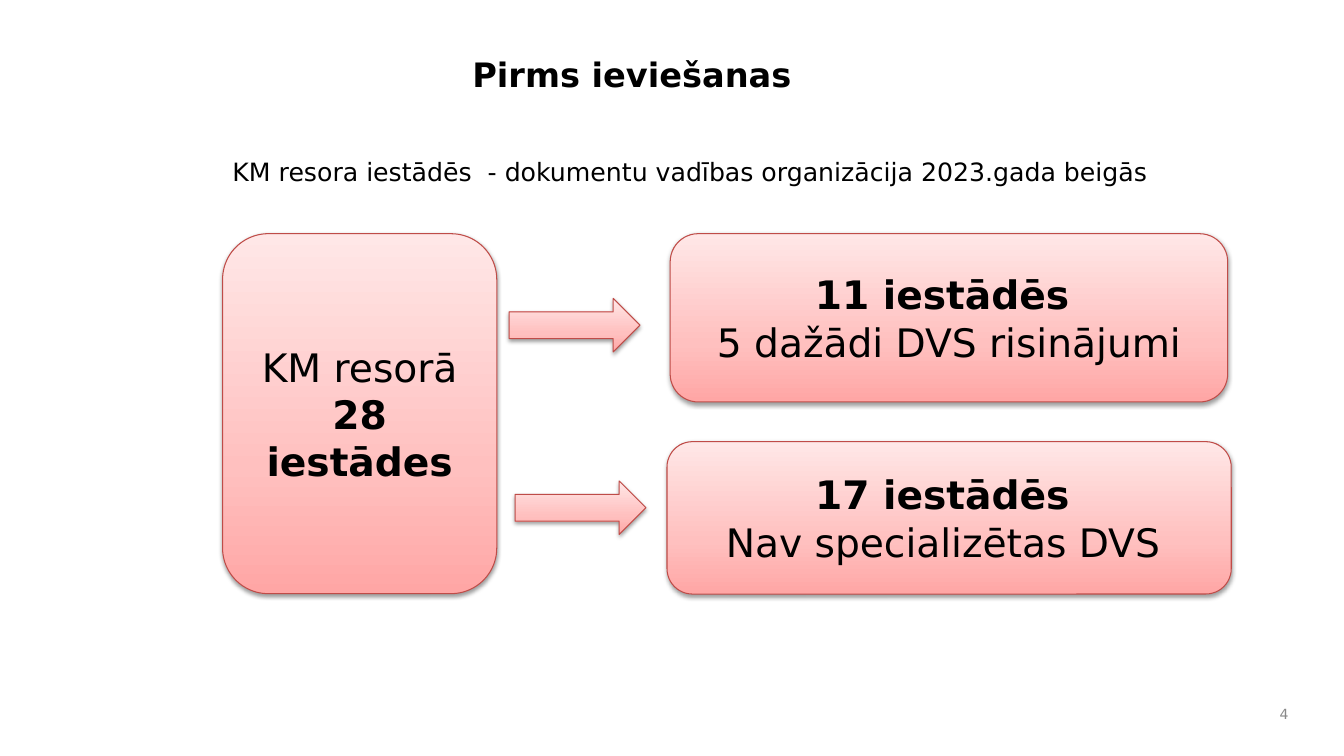
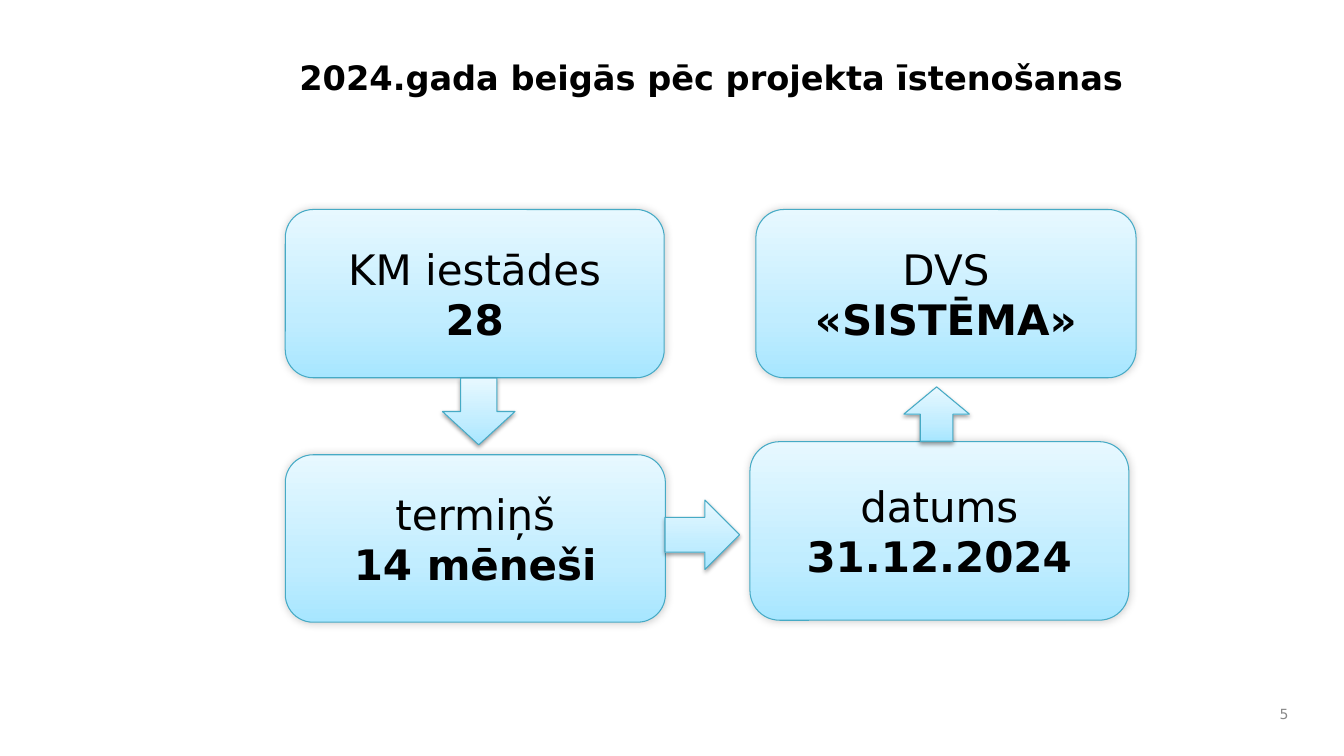
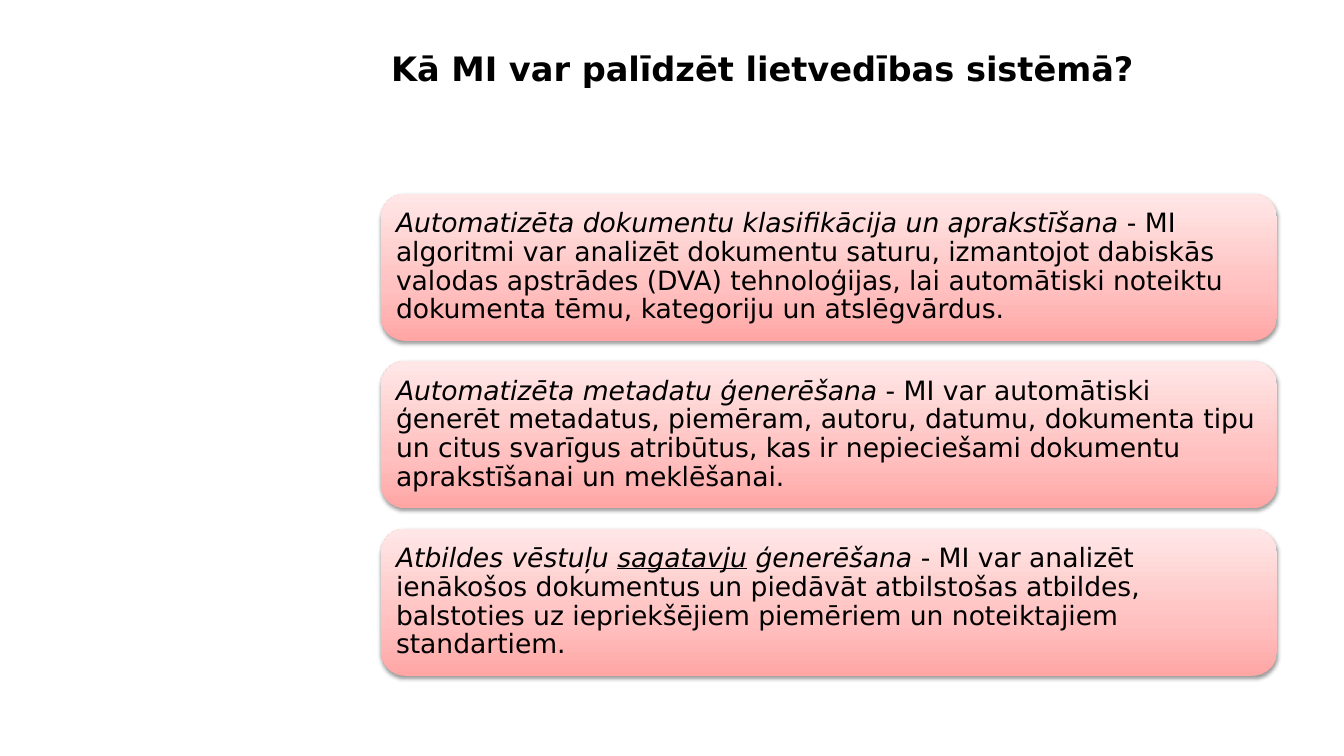
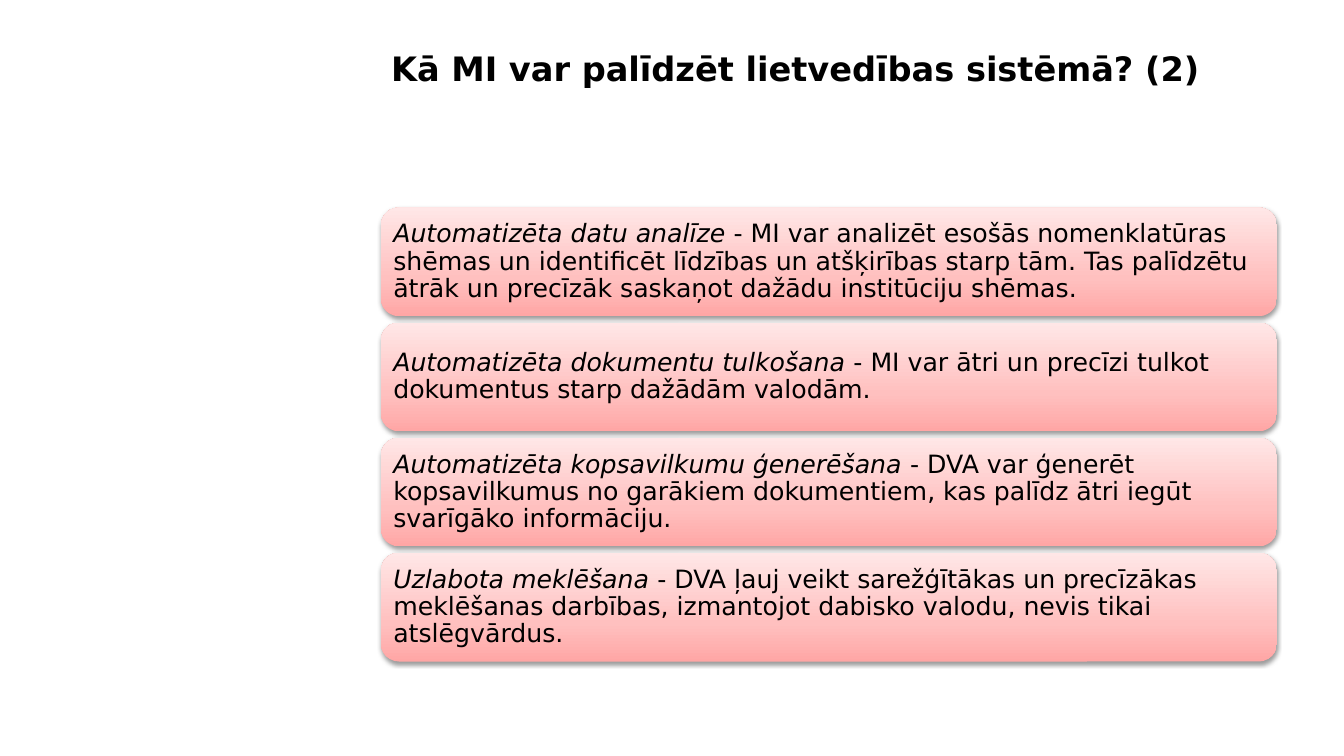
"""Builds four slides on document management and how AI can help with it."""
from pptx import Presentation
from pptx.dml.color import RGBColor
from pptx.enum.shapes import MSO_SHAPE
from pptx.enum.text import MSO_ANCHOR, MSO_AUTO_SIZE, PP_ALIGN
from pptx.oxml import parse_xml
from pptx.oxml.ns import nsdecls, qn
from pptx.util import Cm, Pt

LEFT, CENTER, RIGHT = PP_ALIGN.LEFT, PP_ALIGN.CENTER, PP_ALIGN.RIGHT
TOP, MIDDLE = MSO_ANCHOR.TOP, MSO_ANCHOR.MIDDLE
BOX = MSO_SHAPE.ROUNDED_RECTANGLE
ARROW_RIGHT, ARROW_DOWN, ARROW_UP = MSO_SHAPE.RIGHT_ARROW, MSO_SHAPE.DOWN_ARROW, MSO_SHAPE.UP_ARROW
NO_AUTOFIT = MSO_AUTO_SIZE.NONE

FONT = "DejaVu Sans"
BLACK, GREY = "000000", "898989"
RED = {"stops": [(0, "FFA6A5"), (35, "FFC0BF"), (100, "FFE7E7")], "edge": "BF4C48"}
BLUE = {"stops": [(0, "A7E6FF"), (35, "C1EDFF"), (100, "E7F8FF")], "edge": "46AAC5"}
DROP = {"alpha": 38, "blur": 3.15, "dist": 1.57, "angle": 90}
GLOW = {"alpha": 20, "blur": 6, "dist": 0, "angle": 315}
CARD_LEFT, CARD_WIDTH = 9.6, 22.58

DIAGRAMS = [
    {
        "title": "Pirms ieviešanas", "title_at": (11.65, 1.22, 11.51, 2.06), "number": "4",
        "subtitle": "KM resora iestādēs  - dokumentu vadības organizācija 2023.gada beigās",
        "palette": RED, "box_shadow": DROP, "size": 28,
        "boxes": [
            ((5.61, 5.89, 6.91, 9.07), [[("KM resorā", "")], [("28 iestādes", "b")]]),
            ((16.89, 5.89, 14.05, 4.24), [[("11 iestādēs ", "b")], [("5 dažādi DVS risinājumi", "")]]),
            ((16.81, 11.13, 14.22, 3.84), [[("17 iestādēs ", "b")], [("Nav specializētas DVS ", "")]]),
        ],
        "arrows": [(ARROW_RIGHT, (12.83, 7.52, 3.3, 1.35)), (ARROW_RIGHT, (12.98, 12.12, 3.3, 1.35))],
    },
    {
        "title": "2024.gada beigās pēc projekta īstenošanas", "title_at": (7.29, 1.3, 24.69, 1.7),
        "number": "5", "subtitle": None, "palette": BLUE, "box_shadow": GLOW, "size": 30,
        "boxes": [
            ((7.19, 5.28, 9.55, 4.24), [[("KM iestādes", "")], [("28", "b")]]),
            ((7.19, 11.46, 9.58, 4.22), [[("termiņš", "")], [("14 mēneši", "b")]]),
            ((18.9, 11.13, 9.55, 4.5), [[("datums", "")], [("31.12.2024", "b")]]),
            ((19.05, 5.28, 9.58, 4.24), [[("DVS", "")], [("«SISTĒMA»", "b")]]),
        ],
        "arrows": [
            (ARROW_RIGHT, (16.76, 12.6, 1.88, 1.75)),
            (ARROW_DOWN, (11.15, 9.53, 1.83, 1.68)),
            (ARROW_UP, (22.78, 9.75, 1.65, 1.37)),
        ],
    },
]

CARD_LISTS = [
    {
        "title": "Kā MI var palīdzēt lietvedības sistēmā?",
        "top": 4.88, "height": 3.71, "pitch": 4.22, "size": 19, "inset": 0.2,
        "cards": [
            [("Automatizēta dokumentu klasifikācija un aprakstīšana ", "i"),
             ("- MI algoritmi var analizēt dokumentu saturu, izmantojot dabiskās valodas apstrādes (DVA) "
              "tehnoloģijas, lai automātiski noteiktu dokumenta tēmu, kategoriju un atslēgvārdus.", "")],
            [("Automatizēta metadatu ģenerēšana ", "i"),
             ("- MI var automātiski ģenerēt metadatus, piemēram, autoru, datumu, dokumenta tipu un citus "
              "svarīgus atribūtus, kas ir nepieciešami dokumentu aprakstīšanai un meklēšanai.", "")],
            [("Atbildes vēstuļu ", "i"), ("sagatavju", "iu"), (" ģenerēšana", "i"),
             (" - MI var analizēt ienākošos dokumentus un piedāvāt atbilstošas atbildes, balstoties uz "
              "iepriekšējiem piemēriem un noteiktajiem standartiem.", "")],
        ],
    },
    {
        "title": "Kā MI var palīdzēt lietvedības sistēmā? (2)",
        "top": 5.23, "height": 2.74, "pitch": 2.9, "size": 18, "inset": 0.18,
        "cards": [
            [("Automatizēta datu analīze ", "i"),
             ("- MI var analizēt esošās nomenklatūras shēmas un identificēt līdzības un atšķirības starp "
              "tām. Tas palīdzētu ātrāk un precīzāk saskaņot dažādu institūciju shēmas.", "")],
            [("Automatizēta dokumentu tulkošana ", "i"),
             ("- MI var ātri un precīzi tulkot dokumentus starp dažādām valodām.", "")],
            [("Automatizēta kopsavilkumu ģenerēšana ", "i"),
             ("- DVA var ģenerēt kopsavilkumus no garākiem dokumentiem, kas palīdz ātri iegūt svarīgāko "
              "informāciju.", "")],
            [("Uzlabota meklēšana ", "i"),
             ("- DVA ļauj veikt sarežģītākas un precīzākas meklēšanas darbības, izmantojot dabisko valodu, "
              "nevis tikai atslēgvārdus.", "")],
        ],
    },
]


def rgb(value):
    return RGBColor.from_string(value)


def place(at):
    return [Cm(length) for length in at]


def write(frame, paragraphs, size=18, color=BLACK, align=LEFT, anchor=TOP, spacing=None, inset=None):
    frame.word_wrap = True
    frame.auto_size = NO_AUTOFIT
    frame.vertical_anchor = anchor
    if inset is not None:
        frame.margin_left = frame.margin_right = frame.margin_top = frame.margin_bottom = Cm(inset)
    for index, runs in enumerate(paragraphs):
        paragraph = frame.paragraphs[0] if index == 0 else frame.add_paragraph()
        paragraph.alignment = align
        if spacing:
            paragraph.line_spacing = spacing
        for text, style in runs:
            run = paragraph.add_run()
            run.text = text
            font = run.font
            font.name, font.size = FONT, Pt(size)
            font.color.rgb = rgb(color)
            font.bold, font.italic, font.underline = "b" in style, "i" in style, "u" in style


def add_titled_slide(prs, title, at):
    slide = prs.slides.add_slide(prs.slide_layouts[5])
    heading = slide.shapes.title
    heading.left, heading.top, heading.width, heading.height = place(at)
    write(heading.text_frame, [[(title, "b")]], size=24)
    return slide


def add_text(slide, at, text, **text_format):
    write(slide.shapes.add_textbox(*place(at)).text_frame, [[(text, "")]], **text_format)


def add_panel(slide, kind, at, palette, shadow=DROP, outlined=True):
    panel = slide.shapes.add_shape(kind, *place(at))
    panel.fill.gradient()
    panel.fill.gradient_angle = 90
    properties = panel.fill._xPr
    stops = properties.find(".//" + qn("a:gsLst"))
    for stop in list(stops):
        stops.remove(stop)
    for percent, color in palette["stops"]:
        stops.append(parse_xml(
            f'<a:gs {nsdecls("a")} pos="{percent * 1000}"><a:srgbClr val="{color}"/></a:gs>'))
    if outlined:
        panel.line.color.rgb = rgb(palette["edge"])
        panel.line.width = Pt(0.75)
    else:
        panel.line.fill.background()
    panel.shadow.inherit = False
    properties.find(qn("a:effectLst")).append(parse_xml(
        f'<a:outerShdw {nsdecls("a")} blurRad="{Pt(shadow["blur"])}" dist="{Pt(shadow["dist"])}" '
        f'dir="{shadow["angle"] * 60000}" rotWithShape="0"><a:srgbClr val="{BLACK}">'
        f'<a:alpha val="{shadow["alpha"] * 1000}"/></a:srgbClr></a:outerShdw>'))
    return panel


def add_diagram(prs, content):
    slide = add_titled_slide(prs, content["title"], content["title_at"])
    for at, paragraphs in content["boxes"]:
        box = add_panel(slide, BOX, at, content["palette"], content["box_shadow"])
        write(box.text_frame, paragraphs, size=content["size"], align=CENTER, anchor=MIDDLE)
    for kind, at in content["arrows"]:
        add_panel(slide, kind, at, content["palette"])
    if content["subtitle"]:
        add_text(slide, (5.61, 3.81, 25.63, 1.02), content["subtitle"])
    add_text(slide, (31.6, 17.58, 1.12, 0.84), content["number"],
             size=10, color=GREY, align=RIGHT, anchor=MIDDLE)


def add_card_list(prs, content):
    slide = add_titled_slide(prs, content["title"], (CARD_LEFT, 1.07, CARD_WIDTH, 2.87))
    for row, runs in enumerate(content["cards"]):
        at = (CARD_LEFT, content["top"] + row * content["pitch"], CARD_WIDTH, content["height"])
        card = add_panel(slide, BOX, at, RED, outlined=False)
        write(card.text_frame, [runs], size=content["size"], anchor=MIDDLE,
              spacing=0.9, inset=content["inset"])


def main():
    prs = Presentation()
    prs.slide_width, prs.slide_height = Cm(33.87), Cm(19.05)
    for content in DIAGRAMS:
        add_diagram(prs, content)
    for content in CARD_LISTS:
        add_card_list(prs, content)
    prs.save("out.pptx")


if __name__ == "__main__":
    main()
